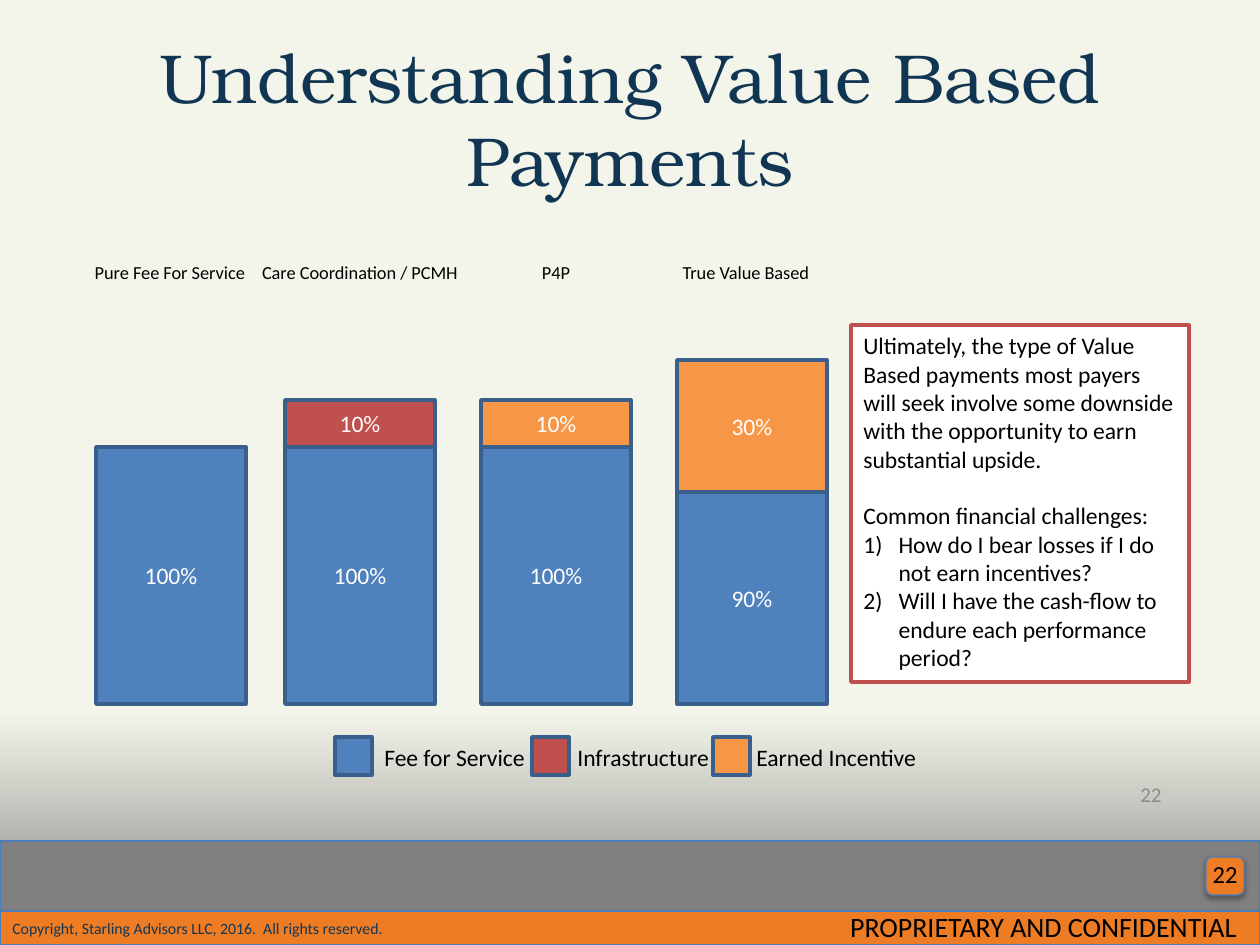
"""Build the slide on value based payments: stacked bars, legend, comment and footer."""
from lxml import etree
from pptx import Presentation
from pptx import util as u
from pptx.dml.color import RGBColor
from pptx.enum import shapes, text
from pptx.oxml import ns

PX = u.Inches(1) / 126
BLUE, RED, ORANGE = "4F81BD", "C0504D", "F79646"
BAR_EDGE, FOOTER_EDGE, FOOTER_ORANGE = "3A5F8C", "4B7EBC", "EE7C25"
NAVY, BLACK, WHITE, GREY = "113654", "000000", "FFFFFF", "808080"
LEFT, CENTER, RIGHT = text.PP_ALIGN.LEFT, text.PP_ALIGN.CENTER, text.PP_ALIGN.RIGHT
TOP, MIDDLE = text.MSO_ANCHOR.TOP, text.MSO_ANCHOR.MIDDLE


def box(area, fill, edge, width=2, preset=shapes.MSO_SHAPE.RECTANGLE, shadow=False):
    shape = slide.shapes.add_shape(preset, *[round(n * PX) for n in area])
    shape.fill.solid()
    shape.fill.fore_color.rgb = RGBColor.from_string(fill)
    shape.line.color.rgb = RGBColor.from_string(edge)
    shape.line.width = u.Pt(width)
    shape.shadow.inherit = False
    if shadow:
        effects = shape._element.spPr.find(ns.qn("a:effectLst"))
        cast = etree.SubElement(effects, ns.qn("a:outerShdw"), blurRad="40000",
                                dist="23000", dir="5400000", rotWithShape="0")
        tint = etree.SubElement(cast, ns.qn("a:srgbClr"), val=BLACK)
        etree.SubElement(tint, ns.qn("a:alpha"), val="35000")
    return shape


def write(words, area=None, shape=None, size=13.5, color=BLACK, font="Calibri",
          align=LEFT, anchor=TOP, wrap=True, before=0, numbered=False):
    if shape is None:
        shape = slide.shapes.add_textbox(*[round(n * PX) for n in area])
    frame = shape.text_frame
    frame.word_wrap = wrap
    frame.vertical_anchor = anchor
    paragraph = frame.add_paragraph() if frame.text else frame.paragraphs[0]
    if numbered:
        props = paragraph._p.get_or_add_pPr()
        props.set("marL", str(u.Inches(0.28)))
        props.set("indent", str(-u.Inches(0.28)))
        etree.SubElement(props, ns.qn("a:buAutoNum"), type="arabicParenR")
    paragraph.alignment = align
    if before:
        paragraph.space_before = u.Pt(before)
    run = paragraph.add_run()
    run.text = words
    run.font.size = u.Pt(size)
    run.font.name = font
    run.font.color.rgb = RGBColor.from_string(color)


deck = Presentation()
deck.slide_width, deck.slide_height = round(1260 * PX), round(945 * PX)
slide = deck.slides.add_slide(deck.slide_layouts[6])

backdrop = slide.background.fill
backdrop.gradient()
backdrop.gradient_angle = 270
for stop, position, tone in zip(backdrop.gradient_stops, (0.75, 1), ("F4F5EA", GREY)):
    stop.position = position
    stop.color.rgb = RGBColor.from_string(tone)

box((0, 841, 1260, 104), GREY, FOOTER_EDGE, width=0.75, shadow=True)
copyright_bar = box((0, 911, 1260, 34), FOOTER_ORANGE, FOOTER_EDGE, width=0.75, shadow=True)
write("Copyright, Starling Advisors LLC, 2016.  All rights reserved.",
      shape=copyright_bar, size=9, color=NAVY, anchor=MIDDLE)
box((1206, 857, 38, 38), FOOTER_ORANGE, FOOTER_EDGE, width=0.75,
    preset=shapes.MSO_SHAPE.ROUNDED_RECTANGLE, shadow=True)
write("22", (1184, 853, 66, 50), size=14, align=RIGHT)
write("PROPRIETARY AND CONFIDENTIAL", (685, 903, 564, 47), size=16, align=RIGHT)

write("Understanding Value Based Payments", (63, 38, 1134, 158), size=39.6,
      color=NAVY, font="TeX Gyre Bonum", align=CENTER, anchor=MIDDLE)
write("22", (890, 775, 284, 38), size=12, color="8C8C8C", align=RIGHT, anchor=MIDDLE)

models = [
    ("Pure Fee For Service", 49, 96, [("100%", 257, BLUE)]),
    ("Care Coordination / PCMH", 239, 285, [("100%", 257, BLUE), ("10%", 47, RED)]),
    ("P4P", 435, 481, [("100%", 257, BLUE), ("10%", 47, ORANGE)]),
    ("True Value Based", 625, 677, [("90%", 212, BLUE), ("30%", 132, ORANGE)]),
]
for model, label_left, bar_left, shares in models:
    write(model, (label_left, 255, 242, 35), size=10.5, align=CENTER)
    level = 704
    for share, height, tone in shares:
        level -= height
        segment = box((bar_left, level, 150, height), tone, BAR_EDGE)
        write(share, shape=segment, color=WHITE, align=CENTER, anchor=MIDDLE)

comment = box((851, 325, 338, 357), WHITE, RED)
write("Ultimately, the type of Value Based payments most payers will seek involve some "
      "downside with the opportunity to earn substantial upside.", shape=comment)
write("Common financial challenges:", shape=comment, before=16.2)
for challenge in ("How do I bear losses if I do not earn incentives?",
                  "Will I have the cash-flow to endure each performance period?"):
    write(challenge, shape=comment, numbered=True)

for source, key_left, label_left, tone in [
        ("Fee for Service", 335, 372, BLUE),
        ("Infrastructure", 532, 565, RED),
        ("Earned Incentive", 713, 744, ORANGE)]:
    box((key_left, 737, 37, 38), tone, BAR_EDGE)
    write(source, (label_left, 737, 190, 42), wrap=False)

deck.save("out.pptx")
